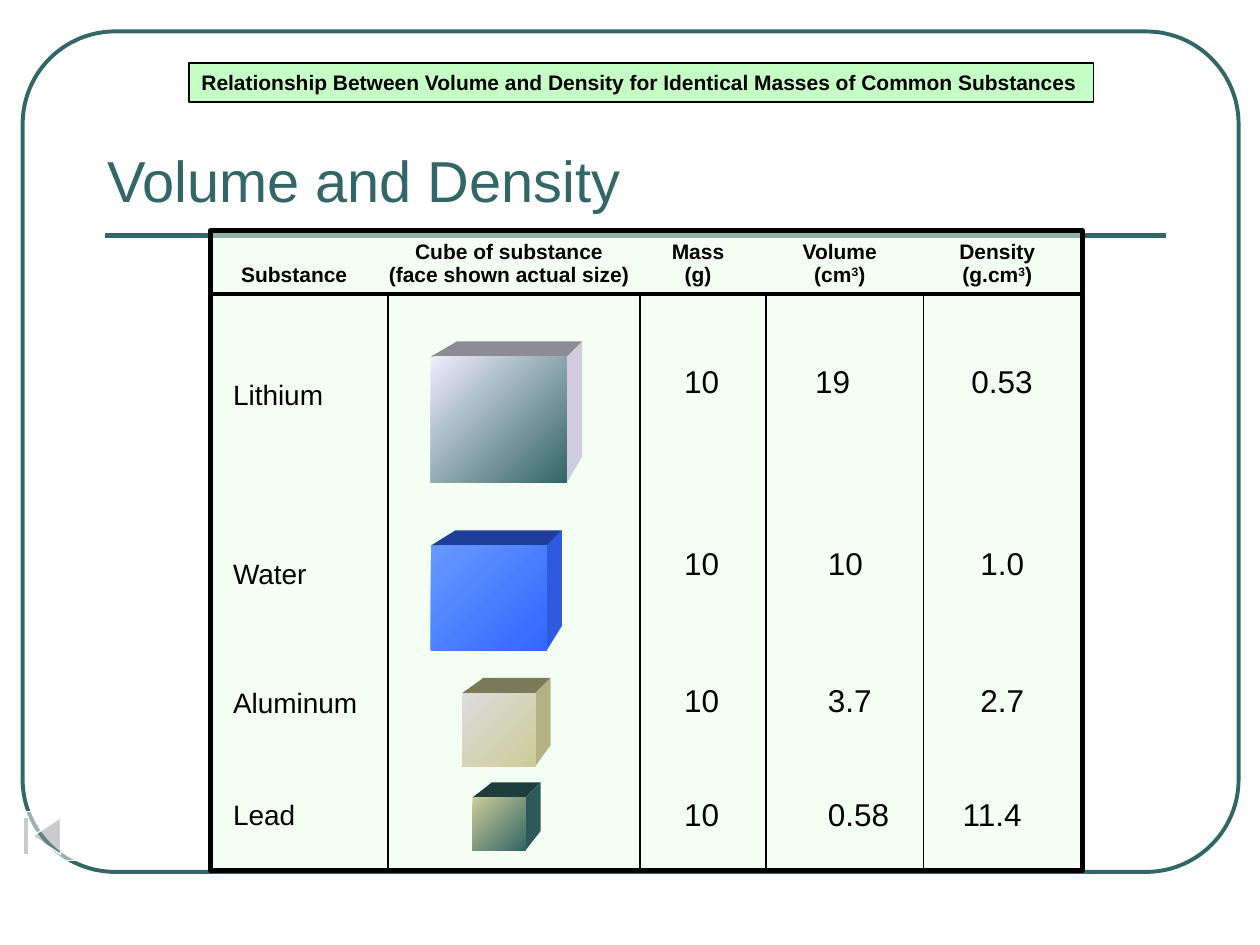
from dataclasses import dataclass
from itertools import pairwise

from lxml import etree
from pptx import Presentation
from pptx.dml.color import RGBColor
from pptx.enum import shapes, text
from pptx.oxml import ns
from pptx.util import Inches, Pt


@dataclass(frozen=True)
class Theme:
    """Colours, font and type sizes of the deck."""
    font: str = "Arial"
    teal: str = "336666"
    ink: str = "000000"
    white: str = "FFFFFF"
    mint: str = "EBFFEB"
    green: str = "8DFF8D"
    title: int = 33
    small: int = 12
    name: int = 16
    value: int = 18


T = Theme()
COLS = [1.67, 3.08, 5.08, 6.08, 7.33, 8.58]
ROWS = [1.83, 2.33, 3.85, 5.11, 6.03, 6.92]
HEADS = [
    [["Substance"]],
    [["Cube of substance"], ["(face shown actual size)"]],
    [["Mass"], ["(g)"]],
    [["Volume"], ["(cm", "^3", ")"]],
    [["Density"], ["(g.cm", "^3", ")"]],
]
DATA = [
    ("Lithium", "", "10", "19", "0.53"),
    ("Water", "", "10", "10", "1.0"),
    ("Aluminum", "", "10", "3.7", "2.7"),
    ("Lead", "", "10", "0.58", "11.4"),
]
INSETS = [
    (0.18, 0, 0.35, 0.39, 0.38),
    (0.18, 0, 0.35, 0.49, 0.45),
    (0.18, 0, 0.35, 0.49, 0.45),
    (0.18, 0, 0.35, 0.49, 0.31),
]
DROPS = [(0.05, -0.05), (0.08, 0), (0.02, 0), (0, 0)]
CUBES = [
    ((3.42, 2.83, 1.08, 1), ("EFEDFD", "336666"), "8D8B93", "D0CCDD"),
    ((3.42, 4.33, 0.92, 0.83), ("6699FF", "3366FF"), "1F3E99", "2E5BDD"),
    ((3.67, 5.5, 0.58, 0.58), ("DDDDDD", "CCCC99"), "7A7A5B", "B2B285"),
    ((3.75, 6.33, 0.42, 0.42), ("CCCC99", "336666"), "1F3D3D", "2C5959"),
]


def rgb(code):
    """Turn a hex code into a colour."""
    return RGBColor.from_string(code)


def write(par, parts, size, color=T.ink, bold=False):
    """Add runs to a paragraph; a leading caret raises a run."""
    for part in parts:
        run = par.add_run()
        run.text = part.removeprefix("^")
        run.font.name, run.font.size = T.font, Pt(size)
        run.font.bold, run.font.color.rgb = bold, rgb(color)
        if part.startswith("^"):
            run._r.get_or_add_rPr().set("baseline", "30000")


def tint(item, color):
    """Fill a shape with a colour at half strength."""
    item.fill.solid()
    item.fill.fore_color.rgb = rgb(color)
    tone = next(item._element.spPr.iter(ns.qn("a:srgbClr")))
    etree.SubElement(tone, ns.qn("a:alpha"), val="50000")


def shape(slide, kind, box, line=None, width=0.75):
    """Add a plain preset shape in the given box."""
    item = slide.shapes.add_shape(kind, *map(Inches, box))
    item.shadow.inherit = False
    item.fill.background()
    if line:
        item.line.color.rgb, item.line.width = rgb(line), Pt(width)
    else:
        item.line.fill.background()
    return item


def rule(slide, ends, color, width):
    """Draw a straight line between two points."""
    kind = shapes.MSO_CONNECTOR.STRAIGHT
    item = slide.shapes.add_connector(kind, *map(Inches, ends))
    item.line.color.rgb, item.line.width = rgb(color), Pt(width)
    etree.SubElement(item._element.spPr, ns.qn("a:effectLst"))


def frame(slide, box):
    """Draw the rounded border and the rule below the title."""
    edge = shape(slide, shapes.MSO_SHAPE.ROUNDED_RECTANGLE, box, T.teal, 2.25)
    edge.adjustments[0] = 0.11
    left, top, wide, _ = box
    y = top + 1.62
    rule(slide, (left + 0.65, y, left + wide - 0.58, y), T.teal, 3)


def title(slide, box):
    """Place the slide title."""
    item = slide.shapes.title
    item.left, item.top, item.width, item.height = map(Inches, box)
    body = item.text_frame
    body.vertical_anchor = text.MSO_ANCHOR.BOTTOM
    par = body.paragraphs[0]
    par.alignment = text.PP_ALIGN.LEFT
    write(par, ["Volume and Density"], T.title, T.teal)


def banner(slide, box):
    """Place the green caption strip."""
    item = shape(slide, shapes.MSO_SHAPE.RECTANGLE, box, T.ink)
    tint(item, T.green)
    body = item.text_frame
    body.word_wrap = False
    par = body.paragraphs[0]
    par.alignment = text.PP_ALIGN.LEFT
    write(par, ["Relationship Between Volume and Density for "
                "Identical Masses of Common Substances"], T.small, bold=True)


def panel(slide, box):
    """Draw the tinted panel behind the table."""
    item = shape(slide, shapes.MSO_SHAPE.RECTANGLE, box, T.ink, 3)
    tint(item, T.mint)


def rules(slide, cols, rows):
    """Draw the line below the headings and those between columns."""
    head, base = rows[1], rows[-1]
    rule(slide, (cols[0], head, cols[-1], head), T.ink, 2.25)
    for x in cols[1:-1]:
        rule(slide, (x, head, x, base), T.ink, 1)


def clear(cell):
    """Remove the fill and the edges of a cell."""
    cell.fill.background()
    props = cell._tc.get_or_add_tcPr()
    for spot, side in enumerate("LRTB"):
        line = etree.Element(ns.qn(f"a:ln{side}"))
        etree.SubElement(line, ns.qn("a:noFill"))
        props.insert(spot, line)


def fit(cell, anchor, left=0, right=0, drop=0, pad=0.03):
    """Set the anchor and margins of a cell."""
    cell.vertical_anchor = anchor
    cell.margin_left, cell.margin_right = Inches(left), Inches(right)
    cell.margin_top = Inches(pad + 2 * max(drop, 0))
    cell.margin_bottom = Inches(pad + 2 * max(-drop, 0))


def grid(slide, cols, rows):
    """Build the table of substances on the given grid lines."""
    box = cols[0], rows[0], cols[-1] - cols[0], rows[-1] - rows[0]
    table = slide.shapes.add_table(5, 5, *map(Inches, box)).table
    table.first_row = table.horz_banding = False
    for col, (a, b) in zip(table.columns, pairwise(cols)):
        col.width = Inches(b - a)
    for row, (a, b) in zip(table.rows, pairwise(rows)):
        row.height = Inches(b - a)
    for c, pars in enumerate(HEADS):
        cell = table.cell(0, c)
        clear(cell)
        fit(cell, text.MSO_ANCHOR.BOTTOM, right=0.08, pad=0.05)
        for n, parts in enumerate(pars):
            body = cell.text_frame
            par = body.add_paragraph() if n else body.paragraphs[0]
            par.alignment = text.PP_ALIGN.CENTER
            write(par, parts, T.small, bold=True)
    for r, (row, insets, drops) in enumerate(zip(DATA, INSETS, DROPS), 1):
        for c, (val, inset) in enumerate(zip(row, insets)):
            cell = table.cell(r, c)
            clear(cell)
            fit(cell, text.MSO_ANCHOR.MIDDLE, inset, drop=drops[c > 0])
            if val:
                par = cell.text_frame.paragraphs[0]
                write(par, [val], T.value if c else T.name)


def face(slide, points, color):
    """Draw one slanted side of a cube."""
    first, *rest = [(Inches(x), Inches(y)) for x, y in points]
    path = slide.shapes.build_freeform(*first)
    path.add_line_segments(rest)
    item = path.convert_to_shape()
    item.shadow.inherit = False
    item.fill.solid()
    item.fill.fore_color.rgb = rgb(color)
    item.line.fill.background()


def cube(slide, box, blend, lid, side):
    """Draw a cube whose front face fills the box."""
    left, top, wide, high = box
    right, base = left + wide, top + high
    deep, skew = 0.12, 0.12 + 0.08 * wide
    far, up = right + deep, top - deep
    face(slide, [(left, top), (left + skew, up), (far, up), (right, top)], lid)
    face(slide, [(right, top), (far, up), (far, base - skew), (right, base)],
         side)
    front = shape(slide, shapes.MSO_SHAPE.RECTANGLE, box)
    front.fill.gradient()
    front.fill.gradient_angle = 315
    for stop, color in zip(front.fill.gradient_stops, blend):
        stop.color.rgb = rgb(color)


def button(slide, box):
    """Place the return button."""
    kind = shapes.MSO_SHAPE.ACTION_BUTTON_BEGINNING
    tint(shape(slide, kind, box, T.white), T.white)


def main():
    """Build and save the slide."""
    deck = Presentation()
    deck.slide_width, deck.slide_height = Inches(10), Inches(7.5)
    slide = deck.slides.add_slide(deck.slide_layouts[5])
    frame(slide, (0.18, 0.25, 9.65, 6.67))
    title(slide, (0.75, 0.5, 8.5, 1.25))
    banner(slide, (1.5, 0.5, 7.18, 0.31))
    panel(slide, (1.67, 1.83, 6.92, 5.08))
    for parts in CUBES:
        cube(slide, *parts)
    grid(slide, COLS, ROWS)
    rules(slide, COLS, ROWS)
    button(slide, (0, 6.44, 0.67, 0.39))
    deck.save("out.pptx")


if __name__ == "__main__":
    main()
